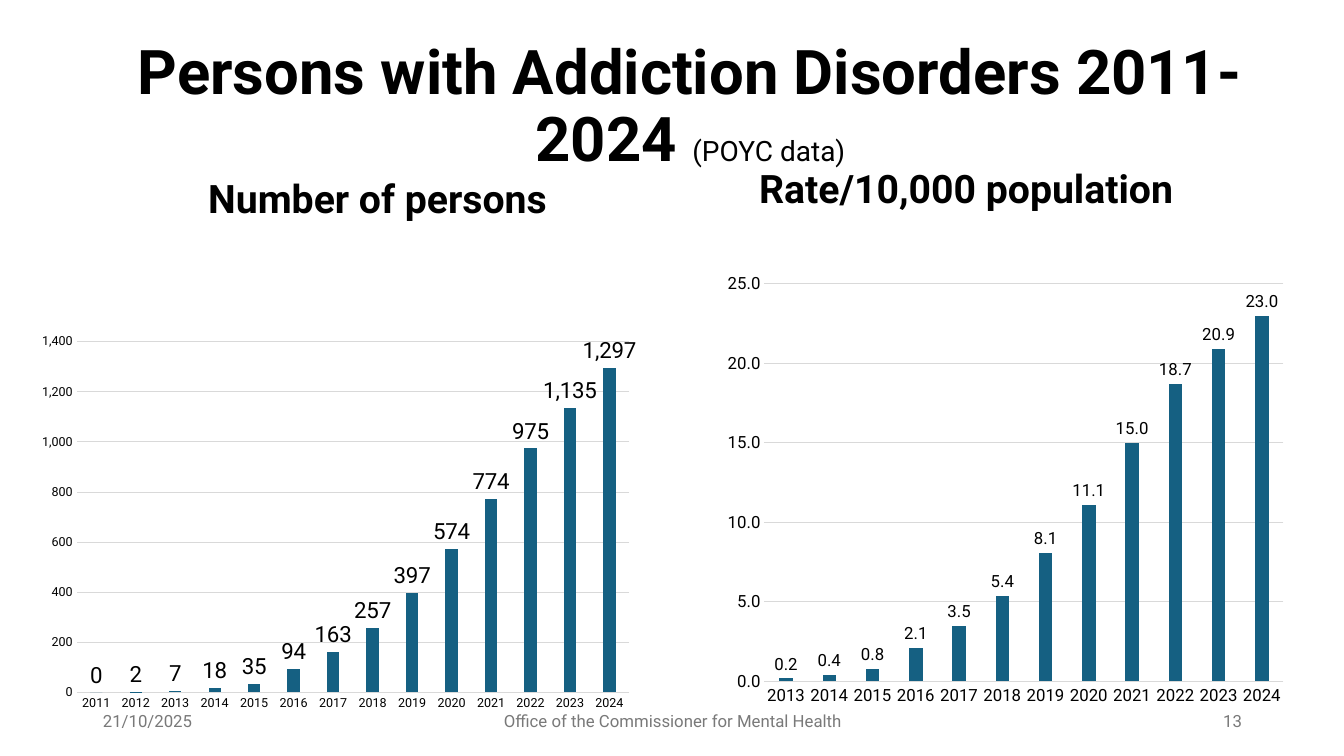
import pptx
import pptx.chart.data
import pptx.dml.color
import pptx.enum.chart
import pptx.enum.text
import pptx.oxml
import pptx.oxml.ns
import pptx.util

ALIGN = pptx.enum.text.PP_ALIGN


def rgb(value):
    """Turn a hex string into a colour."""
    return pptx.dml.color.RGBColor.from_string(value)


class SlideBuilder:
    """Hold the style and the current slide, and add its elements."""

    face = "Roboto"
    ink = "000000"
    muted = "797979"
    rule = "D9D9D9"
    bar = "156082"
    emu_per_px = 914400 / 100.8

    def __init__(self, width, height):
        """Start a presentation with one blank slide."""
        self.deck = pptx.Presentation()
        self.deck.slide_width, self.deck.slide_height = self.lengths(width, height)
        self.slide = self.deck.slides.add_slide(self.deck.slide_layouts[6])

    def lengths(self, *pixels):
        """Convert pixels to EMU."""
        return [pptx.util.Emu(round(px * self.emu_per_px)) for px in pixels]

    def set_font(self, font, size, color=None, bold=False):
        """Apply the slide's typeface to a font."""
        font.name = self.face
        font.size = pptx.util.Pt(size)
        font.bold = bold
        font.color.rgb = rgb(color or self.ink)

    def add_text(self, box, runs, align, color=None, spacing=1.0):
        """Add one paragraph made of (text, size, bold) runs."""
        frame = self.slide.shapes.add_textbox(*self.lengths(*box)).text_frame
        frame.word_wrap = True
        frame.vertical_anchor = pptx.enum.text.MSO_ANCHOR.MIDDLE
        paragraph = frame.paragraphs[0]
        paragraph.alignment = align
        paragraph.line_spacing = spacing
        for text, size, bold in runs:
            run = paragraph.add_run()
            run.text = text
            self.set_font(run.font, size, color, bold)

    def add_columns(self, box, first_year, values, top, step, number_format,
                    axis_size, label_size, plot_box):
        """Add a column chart with one value per year."""
        data = pptx.chart.data.CategoryChartData(number_format=number_format)
        data.categories = [str(first_year + i) for i in range(len(values))]
        data.add_series("Series 1", values)
        chart = self.slide.shapes.add_chart(
            pptx.enum.chart.XL_CHART_TYPE.COLUMN_CLUSTERED, *self.lengths(*box), data).chart
        chart.has_legend = False
        chart.has_title = False
        self.set_font(chart.font, axis_size)

        plot = chart.plots[0]
        plot.vary_by_categories = False
        plot.gap_width = 219
        plot.overlap = -27
        fill = plot.series[0].format.fill
        fill.solid()
        fill.fore_color.rgb = rgb(self.bar)
        plot.has_data_labels = True
        labels = plot.data_labels
        labels.show_value = True
        labels.position = pptx.enum.chart.XL_LABEL_POSITION.OUTSIDE_END
        labels.number_format = number_format
        labels.number_format_is_linked = False
        self.set_font(labels.font, label_size)

        years, scale = chart.category_axis, chart.value_axis
        for axis in (years, scale):
            axis.major_tick_mark = pptx.enum.chart.XL_TICK_MARK.NONE
            axis.minor_tick_mark = pptx.enum.chart.XL_TICK_MARK.NONE
            self.set_font(axis.tick_labels.font, axis_size)
        scale.minimum_scale, scale.maximum_scale, scale.major_unit = 0, top, step
        scale.tick_labels.number_format = number_format
        scale.tick_labels.number_format_is_linked = False
        scale.format.line.fill.background()
        scale.has_major_gridlines = True
        for line in (years.format.line, scale.major_gridlines.format.line):
            line.color.rgb = rgb(self.rule)
            line.width = pptx.util.Pt(0.75)
        self.place_plot(chart, plot_box)

    def place_plot(self, chart, plot_box):
        """Fix the inner plot area as fractions of the chart."""
        area = chart.element.xpath("c:chart/c:plotArea")[0] if hasattr(chart, "element") \
            else chart._chartSpace.xpath("c:chart/c:plotArea")[0]
        for layout in area.xpath("c:layout"):
            area.remove(layout)
        parts = [("layoutTarget", "inner"), ("xMode", "edge"), ("yMode", "edge")]
        parts += zip("xywh", plot_box)
        settings = "".join(f'<c:{tag} val="{value}"/>' for tag, value in parts)
        area.insert(0, pptx.oxml.parse_xml(
            f'<c:layout {pptx.oxml.ns.nsdecls("c")}>'
            f"<c:manualLayout>{settings}</c:manualLayout></c:layout>"))


def main():
    """Build the addiction disorders slide."""
    page = SlideBuilder(1344, 756)
    page.add_text((93, 30, 1195, 156),
                  [("Persons with Addiction Disorders 2011-2024 ", 44, True),
                   ("(POYC data)", 20, False)], ALIGN.CENTER, spacing=0.9)
    for box, heading in (((93, 150, 569, 101), "Number of persons"),
                         ((680, 131, 572, 120), "Rate/10,000 population")):
        page.add_text(box, [(heading, 28, True)], ALIGN.CENTER, spacing=0.9)

    persons = (0, 2, 7, 18, 35, 94, 163, 257, 397, 574, 774, 975, 1135, 1297)
    rates = (0.2, 0.4, 0.8, 2.1, 3.5, 5.4, 8.1, 11.1, 15.0, 18.7, 20.9, 23.0)
    page.add_columns((42, 220, 618, 491), 2011, persons, 1400, 200, "#,##0",
                     9, 16, (0.05, 0.25, 0.9, 0.72))
    page.add_columns((715, 220, 618, 491), 2013, rates, 25, 5, "0.0",
                     12, 12, (0.08, 0.13, 0.84, 0.81))

    for left, width, text, align in (
            (93, 302, "21/10/2025", ALIGN.LEFT),
            (446, 454, "Office of the Commissioner for Mental Health", ALIGN.CENTER),
            (950, 302, "13", ALIGN.RIGHT)):
        page.add_text((left, 701, width, 40), [(text, 12, False)], align, page.muted)
    page.deck.save("out.pptx")


if __name__ == "__main__":
    main()
